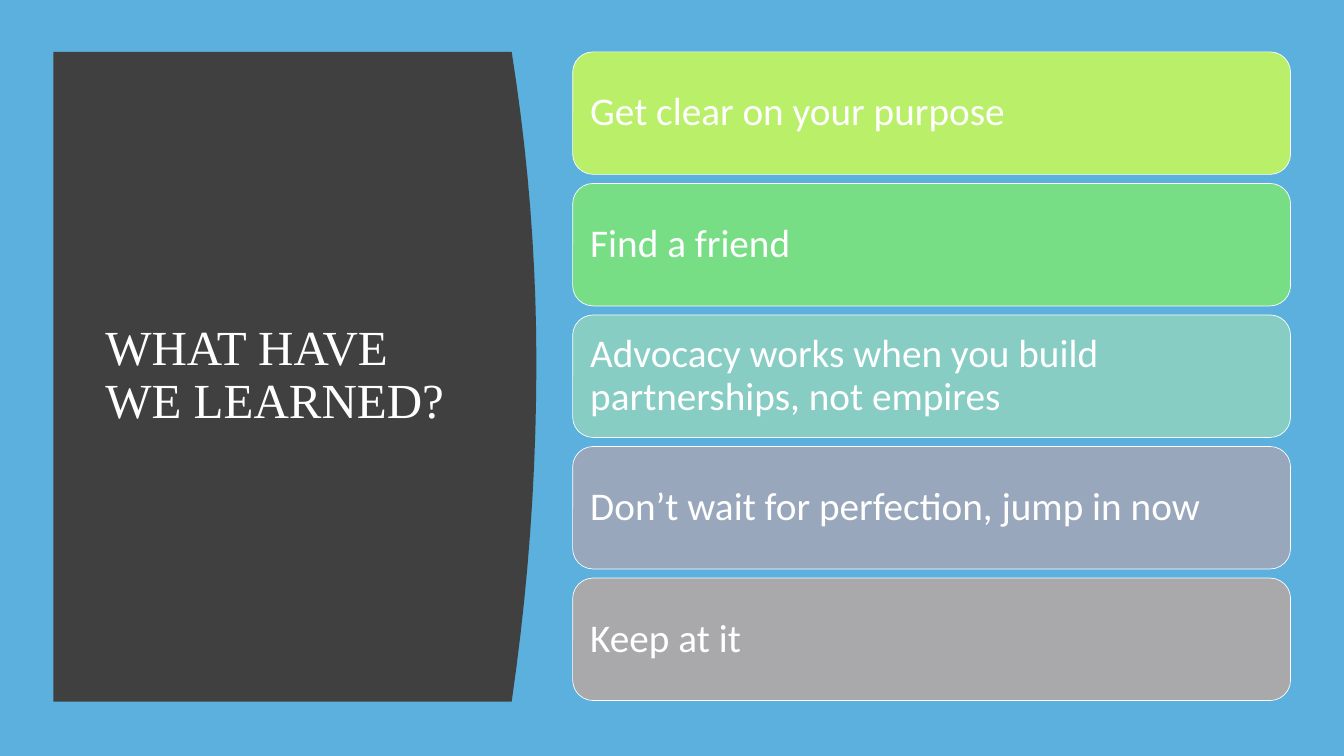
from pptx import Presentation
from pptx.dml.color import RGBColor as Rgb
from pptx.enum.shapes import MSO_SHAPE as Shape
from pptx.enum.text import MSO_ANCHOR as Anchor, MSO_AUTO_SIZE as Fit, PP_ALIGN as Align
from pptx.util import Inches, Pt

HUES = {"back": "5BB0DD", "panel": "404040", "text": "FFFFFF"}
CARDS = {
    "Get clear on your purpose": "BAEF69",
    "Find a friend": "78DE86",
    "Advocacy works when you build partnerships, not empires": "88CDC4",
    "Don’t wait for perfection, jump in now": "98A7BC",
    "Keep at it": "A9A8AB",
}
WIDE, HIGH = 26.66, 15
LEFT, TOP, FOOT = 1.06, 1.03, 13.92
EDGE, BOW, MID = 10.15, 0.49, 7.2
STEPS = 20
ROW, GAP = 2.43, 0.18


def paint(fill, hue):
    fill.solid()
    fill.fore_color.rgb = Rgb.from_string(hue)


def write(shape, text, face, size, pads):
    """Set left-aligned, vertically centred text; pads are the side and top insets."""
    frame = shape.text_frame
    frame.text = text
    frame.word_wrap = True
    frame.auto_size = Fit.NONE
    frame.vertical_anchor = Anchor.MIDDLE
    frame.margin_left = frame.margin_right = Inches(pads[0])
    frame.margin_top = frame.margin_bottom = Inches(pads[1])
    line = frame.paragraphs[0]
    line.alignment = Align.LEFT
    line.line_spacing = 0.9
    font = line.runs[0].font
    font.name, font.size = face, Pt(size)
    font.color.rgb = Rgb.from_string(HUES["text"])


deck = Presentation()
deck.slide_width, deck.slide_height = Inches(WIDE), Inches(HIGH)
slide = deck.slides.add_slide(deck.slide_layouts[5])
shapes = slide.shapes
title = shapes.title
paint(slide.background.fill, HUES["back"])

# Dark panel whose right side bows outwards
curve = []
for i in range(STEPS + 1):
    t = 2 * i / STEPS - 1
    reach = MID - TOP if t < 0 else FOOT - MID
    curve.append((EDGE + BOW * (1 - t * t), MID + t * reach))
pen = shapes.build_freeform(Inches(LEFT), Inches(TOP), scale=1.0)
pen.add_line_segments([(Inches(x), Inches(y)) for x, y in curve + [(LEFT, FOOT)]])
panel = pen.convert_to_shape()
panel.shadow.inherit = False
paint(panel.fill, HUES["panel"])
panel.line.fill.background()

# Title goes in front of the panel
panel._element.addnext(title._element)
title.left, title.top = Inches(1.89), Inches(2.21)
title.width, title.height = Inches(7.47), Inches(10.49)
write(title, "WHAT HAVE WE LEARNED?", "Times New Roman", 70, (0.2, 0.1))

# One card per lesson
for i, (text, hue) in enumerate(CARDS.items()):
    card = shapes.add_shape(Shape.ROUNDED_RECTANGLE, Inches(11.36),
                            Inches(TOP + i * (ROW + GAP)), Inches(14.24), Inches(ROW))
    card.shadow.inherit = False
    paint(card.fill, hue)
    paint(card.line.fill, HUES["text"])
    card.line.width = Pt(1)
    write(card, text, "Calibri", 56, (0.23, 0.23))

deck.save("out.pptx")
